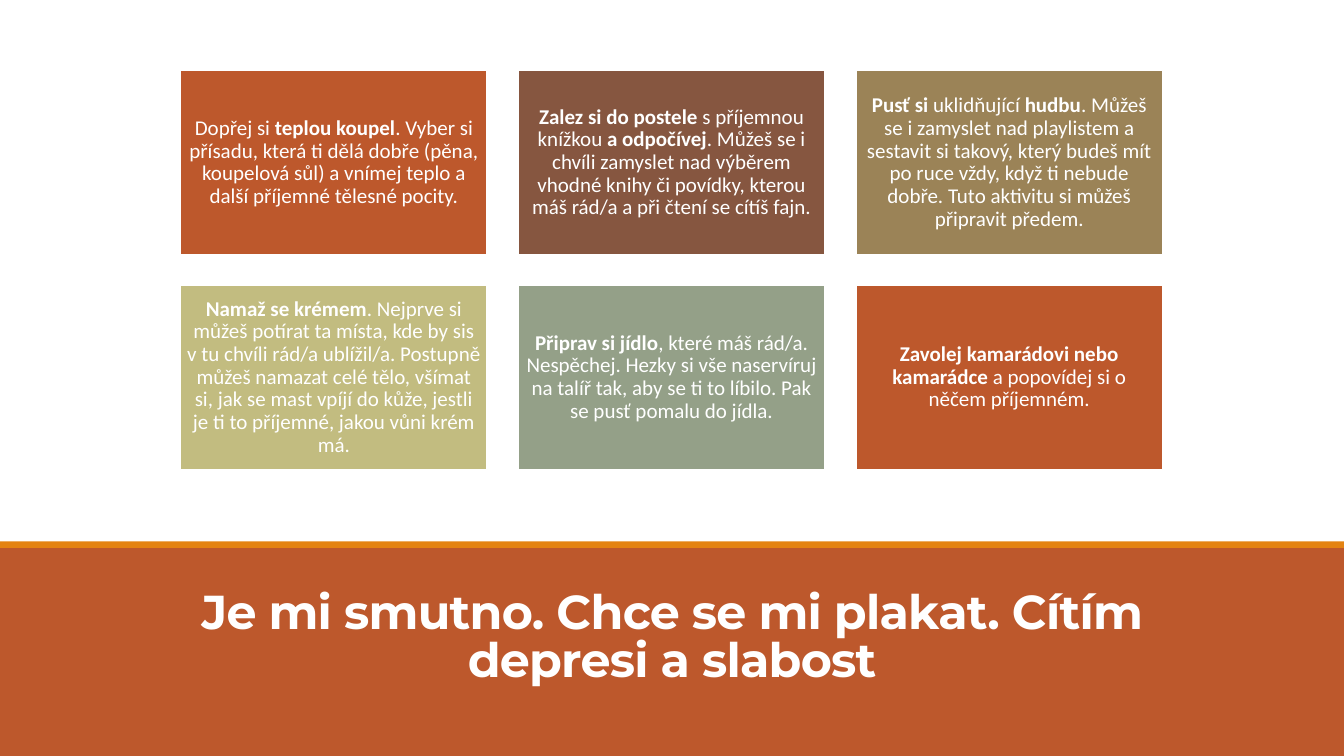
from pptx import Presentation
from pptx.dml.color import RGBColor
from pptx.enum.shapes import MSO_SHAPE as Shape
from pptx.enum.text import MSO_ANCHOR as Anchor, MSO_AUTO_SIZE as AutoSize, PP_ALIGN as Align
from pptx.util import Cm, Pt

COLORS = {
    "white": "FFFFFF",
    "rust": "BD582C",
    "orange": "E48312",
    "brown": "865640",
    "khaki": "9B8357",
    "straw": "C2BC80",
    "sage": "94A088",
}

SLIDE_WIDTH, SLIDE_HEIGHT = 33.87, 19.05
BAND_TOP = 13.77

# Card grid, in centimetres
COLUMNS = 3
GRID_LEFT, GRID_TOP = 4.55, 1.78
CARD_WIDTH, CARD_HEIGHT = 7.73, 4.64
STEP_X, STEP_Y = 8.51, 5.41

TITLE = "Je mi smutno. Chce se mi plakat. Cítím depresi a slabost"

# Each tip: card colour, then pieces of text with their bold flag
TIPS = [
    ("rust", [
        ("Dopřej si ", False), ("teplou koupel", True),
        (". Vyber si přísadu, která ti dělá dobře (pěna, koupelová sůl) "
         "a vnímej teplo a další příjemné tělesné pocity.", False)]),
    ("brown", [
        ("Zalez si do postele", True), (" s příjemnou knížkou ", False),
        ("a odpočívej", True),
        (". Můžeš se i chvíli zamyslet nad výběrem vhodné knihy či povídky, "
         "kterou máš rád/a a při čtení se cítíš fajn.", False)]),
    ("khaki", [
        ("Pusť si", True), (" uklidňující ", False), ("hudbu", True),
        (". Můžeš se i zamyslet nad playlistem a sestavit si takový, "
         "který budeš mít po ruce vždy, když ti nebude dobře. "
         "Tuto aktivitu si můžeš připravit předem.", False)]),
    ("straw", [
        ("Namaž se krémem", True),
        (". Nejprve si můžeš potírat ta místa, kde by sis v tu chvíli rád/a "
         "ublížil/a. Postupně můžeš namazat celé tělo, všímat si, jak se mast "
         "vpíjí do kůže, jestli je ti to příjemné, jakou vůni krém má.", False)]),
    ("sage", [
        ("Připrav si jídlo", True),
        (", které máš rád/a. Nespěchej. Hezky si vše naservíruj na talíř tak, "
         "aby se ti to líbilo. Pak se pusť pomalu do jídla.", False)]),
    ("rust", [
        ("Zavolej kamarádovi nebo kamarádce", True),
        (" a popovídej si o něčem příjemném.", False)]),
]


def color(name):
    return RGBColor.from_string(COLORS[name])


def format_run(run, font_name, size, bold):
    run.font.name = font_name
    run.font.size = Pt(size)
    run.font.bold = bold
    run.font.color.rgb = color("white")


def add_block(slide, left, top, width, height, fill):
    block = slide.shapes.add_shape(
        Shape.RECTANGLE, Cm(left), Cm(top), Cm(width), Cm(height))
    block.shadow.inherit = False
    block.fill.solid()
    block.fill.fore_color.rgb = color(fill)
    block.line.fill.background()
    return block


def add_tip(slide, left, top, fill, pieces):
    tip = add_block(slide, left, top, CARD_WIDTH, CARD_HEIGHT, fill)
    tip.line.color.rgb = color("white")
    tip.line.width = Pt(1.25)
    frame = tip.text_frame
    frame.word_wrap = True
    frame.vertical_anchor = Anchor.MIDDLE
    frame.margin_left = frame.margin_right = Cm(0.15)
    frame.margin_top = frame.margin_bottom = Cm(0.15)
    paragraph = frame.paragraphs[0]
    paragraph.alignment = Align.CENTER
    paragraph.line_spacing = 0.9
    for text, bold in pieces:
        run = paragraph.add_run()
        run.text = text
        format_run(run, "Calibri", 15, bold)


def set_title(slide):
    title = slide.shapes.title
    title.left, title.top = Cm(2.97), Cm(14.58)
    title.width, title.height = Cm(27.94), Cm(2.87)
    frame = title.text_frame
    frame.text = TITLE
    frame.word_wrap = True
    frame.auto_size = AutoSize.NONE
    frame.vertical_anchor = Anchor.BOTTOM
    paragraph = frame.paragraphs[0]
    paragraph.alignment = Align.CENTER
    paragraph.line_spacing = 0.85
    run = paragraph.runs[0]
    format_run(run, "Montserrat", 34, True)
    run.font._element.set("spc", "-50")
    # Bring the title in front of the band
    title._element.getparent().append(title._element)


def main():
    deck = Presentation()
    deck.slide_width, deck.slide_height = Cm(SLIDE_WIDTH), Cm(SLIDE_HEIGHT)
    slide = deck.slides.add_slide(deck.slide_layouts[5])
    slide.background.fill.solid()
    slide.background.fill.fore_color.rgb = color("white")

    # Title band with its stripe
    add_block(slide, 0, BAND_TOP, SLIDE_WIDTH, SLIDE_HEIGHT - BAND_TOP, "rust")
    set_title(slide)
    add_block(slide, 0, 13.64, SLIDE_WIDTH, 0.17, "orange")

    # Tips in a grid
    for index, (fill, pieces) in enumerate(TIPS):
        row, column = divmod(index, COLUMNS)
        add_tip(slide, GRID_LEFT + column * STEP_X, GRID_TOP + row * STEP_Y,
                fill, pieces)

    deck.save("out.pptx")


if __name__ == "__main__":
    main()
